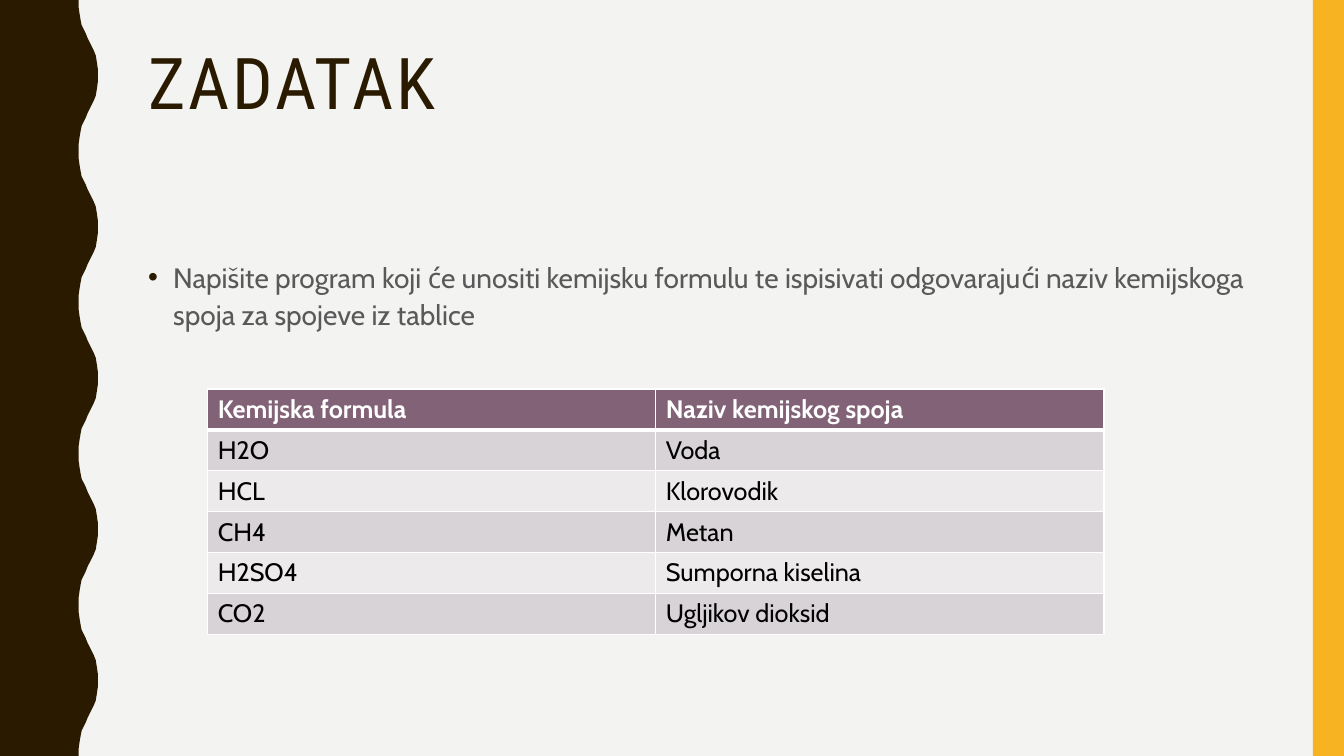
from lxml.etree import SubElement
from pptx import Presentation
from pptx.dml.color import RGBColor
from pptx.enum.shapes import MSO_SHAPE as Shape
from pptx.enum.text import MSO_ANCHOR as Anchor, MSO_AUTO_SIZE as AutoSize, PP_ALIGN as Align
from pptx.oxml import parse_xml
from pptx.oxml.ns import nsdecls, qn
from pptx.util import Inches, Pt

WIDTH, HEIGHT = 13.33, 7.5
DARK, GOLD, WHITE = "2A1A00", "F8B323", "FFFFFF"
HEADER, BANDS = "826276", ("D8D3D6", "EDEAEC")
WAVE_PERIOD = 1.5
HALF_WAVE = [
    (0.78, 0), (0.78, 0.07), (0.79, 0.14), (0.8, 0.2), (0.81, 0.25),
    (0.83, 0.29), (0.85, 0.33), (0.87, 0.38), (0.89, 0.42), (0.91, 0.46),
    (0.93, 0.5), (0.95, 0.55), (0.96, 0.61), (0.97, 0.68), (0.97, 0.75),
]
TASK = ("Napišite program koji će unositi kemijsku formulu te ispisivati "
        "odgovarajući naziv kemijskoga spoja za spojeve iz tablice")
COMPOUNDS = [
    ("Kemijska formula", "Naziv kemijskog spoja"),
    ("H2O", "Voda"),
    ("HCL", "Klorovodik"),
    ("CH4", "Metan"),
    ("H2SO4", "Sumporna kiselina"),
    ("CO2", "Ugljikov dioksid"),
]


def paint(fill, color):
    """Give a fill one solid colour."""
    fill.solid()
    fill.fore_color.rgb = RGBColor.from_string(color)


def write(frame, text, size, color, font="Cabin", bold=False, line=1.0, before=0, tracking=0):
    """Put one formatted paragraph in a text frame and return it."""
    para = frame.paragraphs[0]
    para.alignment = Align.LEFT
    para.line_spacing = line
    para.space_before = Pt(before)
    span = para.add_run()
    span.text = text
    span.font.name, span.font.size, span.font.bold = font, Pt(size), bold
    paint(span.font.fill, color)
    if tracking:
        span._r.get_or_add_rPr().set("spc", str(tracking * 100))
    return para


def finish(shape, color):
    """Make a shape flat, in one colour, without an outline."""
    paint(shape.fill, color)
    shape.line.fill.background()
    shape.shadow.inherit = False


def place(shape, left, top, width, height):
    """Move a text shape to its box and fix its text to the top."""
    shape.left, shape.top = Inches(left), Inches(top)
    shape.width, shape.height = Inches(width), Inches(height)
    frame = shape.text_frame
    frame.word_wrap = True
    frame.auto_size = AutoSize.NONE
    frame.vertical_anchor = Anchor.TOP
    return frame


def add_wave(page, left, top, height):
    """Draw the dark band with a wavy right edge."""
    wave = HALF_WAVE + [(x, WAVE_PERIOD - y) for x, y in HALF_WAVE[-2::-1]]
    edge = [(left + x, top + y + WAVE_PERIOD * turn)
            for turn in range(round(height / WAVE_PERIOD)) for x, y in wave]
    builder = page.shapes.build_freeform(Inches(left), Inches(top))
    outline = edge + [(left, top + height)]
    builder.add_line_segments([(Inches(x), Inches(y)) for x, y in outline], close=True)
    finish(builder.convert_to_shape(), DARK)


def add_stripe(page, left, top, width, height):
    """Draw the plain stripe at the right edge."""
    box = Inches(left), Inches(top), Inches(width), Inches(height)
    finish(page.shapes.add_shape(Shape.RECTANGLE, *box), GOLD)


def add_title(page, *box):
    """Fill the title placeholder."""
    frame = place(page.shapes.title, *box)
    write(frame, "ZADATAK", 51, DARK, font="Roboto Condensed", line=0.9, tracking=2)


def add_task(page, *box):
    """Write the task as a bulleted paragraph."""
    frame = place(page.shapes.add_textbox(0, 0, 0, 0), *box)
    para = write(frame, TASK, 20, "595959", line=1.1, before=7)
    props = para._p.get_or_add_pPr()
    props.set("marL", str(Inches(0.25)))
    props.set("indent", str(Inches(-0.25)))
    bullet_color = SubElement(props, qn("a:buClr"))
    SubElement(bullet_color, qn("a:srgbClr"), val=DARK)
    SubElement(props, qn("a:buFont"), typeface="Arial")
    SubElement(props, qn("a:buChar"), char="•")


def add_borders(cell, **widths):
    """Draw white cell borders with the given widths in points."""
    props = cell._tc.get_or_add_tcPr()
    for index, (side, width) in enumerate(widths.items()):
        props.insert(index, parse_xml(
            f'<a:ln{side} {nsdecls("a")} w="{Pt(width)}"><a:solidFill>'
            f'<a:srgbClr val="{WHITE}"/></a:solidFill></a:ln{side}>'))


def add_compounds(page, left, top, width, height):
    """Build the table of formulas and compound names."""
    box = Inches(left), Inches(top), Inches(width), Inches(height)
    table = page.shapes.add_table(len(COMPOUNDS), len(COMPOUNDS[0]), *box).table
    for row, texts in enumerate(COMPOUNDS):
        is_header = row == 0
        for column, text in enumerate(texts):
            cell = table.cell(row, column)
            paint(cell.fill, HEADER if is_header else BANDS[(row - 1) % 2])
            add_borders(cell, L=1, R=1, T=3 if row == 1 else 1, B=3 if is_header else 1)
            write(cell.text_frame, text, 18, WHITE if is_header else "000000", bold=is_header)


def main():
    """Build and save the deck."""
    deck = Presentation()
    deck.slide_width, deck.slide_height = Inches(WIDTH), Inches(HEIGHT)
    page = deck.slides.add_slide(deck.slide_layouts.get_by_name("Title Only"))
    paint(page.background.fill, "F3F3F2")
    add_wave(page, 0, 0, HEIGHT)
    add_stripe(page, 13.02, 0, 0.31, HEIGHT)
    add_title(page, 1.37, 0.42, 11.13, 1.63)
    add_task(page, 1.37, 2.5, 11.13, 0.91)
    add_compounds(page, 2.06, 3.86, 8.89, 2.43)
    deck.save("out.pptx")


if __name__ == "__main__":
    main()
